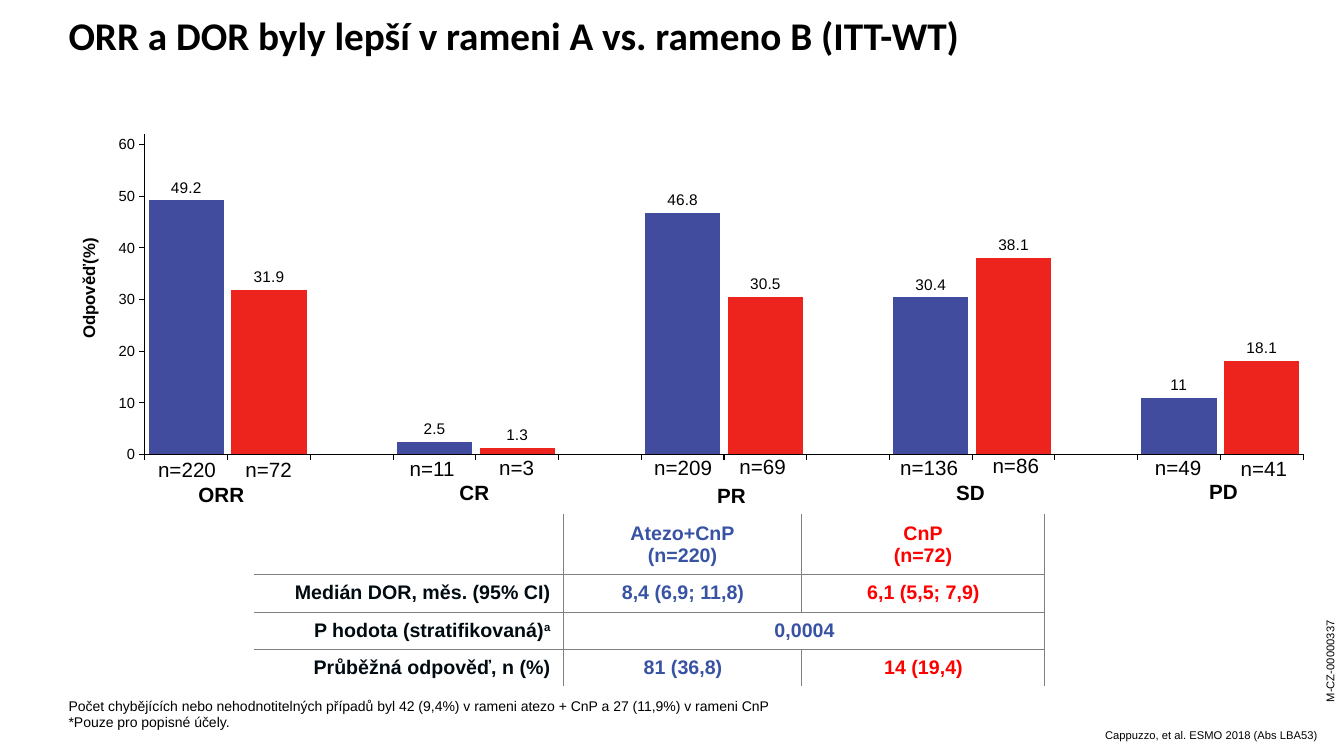
from dataclasses import dataclass
from lxml.etree import SubElement
from pptx import Presentation
from pptx.chart.data import CategoryChartData
from pptx.dml.color import RGBColor
from pptx.enum.chart import XL_CHART_TYPE as ChartType
from pptx.enum.chart import XL_LABEL_POSITION as LabelPos
from pptx.enum.chart import XL_TICK_LABEL_POSITION as TickLabelPos
from pptx.enum.chart import XL_TICK_MARK as Tick
from pptx.enum.text import MSO_ANCHOR as Anchor
from pptx.enum.text import PP_ALIGN as Align
from pptx.oxml.ns import qn
from pptx.util import Emu, Pt


@dataclass(frozen=True)
class Theme:
    black: str = "000000"
    ink: str = "000B11"
    white: str = "FFFFFF"
    grid: str = "808080"
    arm_a: str = "3953A4"
    arm_b: str = "FF0000"
    bar_a: str = "424C9F"
    bar_b: str = "EC241D"
    body: str = "Arial"
    heading: str = "Calibri"
    title: float = 28
    label: float = 14.7
    table: float = 14
    axis_title: float = 12
    value: float = 11
    tick: float = 10.5
    note: float = 10
    small: float = 8


T = Theme()


@dataclass(frozen=True)
class Box:
    lines: tuple[str, ...]
    x: int
    y: int
    w: int
    h: int
    size: float
    bold: bool = False
    font: str = T.body
    align: Align = Align.LEFT
    anchor: Anchor = Anchor.MIDDLE
    margins: tuple[int, int, int, int] = (0, 0, 0, 0)
    rotation: int = 0
    wrap: bool = True


@dataclass(frozen=True)
class Group:
    name: str
    x: int
    y: int
    counts: tuple[tuple[str, int, int], ...]  # text, left, top


@dataclass(frozen=True)
class Cell:
    lines: tuple[str, ...]
    color: str
    align: Align = Align.CENTER
    margins: tuple[int, int, int, int] = (14, 0, 13, 0)
    superscript: str = ""


def px(n: float) -> Emu:
    return Emu(int(n * 9144))  # 100 px to the inch


def style(font, size: float, color: str = T.black, bold: bool = False, name: str = T.body) -> None:
    for key, value in {"size": Pt(size), "bold": bold, "name": name}.items():
        setattr(font, key, value)
    font.color.rgb = RGBColor.from_string(color)


def set_margins(target, margins: tuple[int, int, int, int]) -> None:
    for side, value in zip(("left", "top", "right", "bottom"), margins):
        setattr(target, f"margin_{side}", px(value))


def add_box(s, b: Box) -> None:
    sp = s.shapes.add_textbox(px(b.x), px(b.y), px(b.w), px(b.h))
    sp.rotation = b.rotation
    tf = sp.text_frame
    tf.word_wrap = b.wrap
    tf.vertical_anchor = b.anchor
    set_margins(tf, b.margins)
    for i, line in enumerate(b.lines):
        p = tf.add_paragraph() if i else tf.paragraphs[0]
        p.alignment = b.align
        r = p.add_run()
        r.text = line
        style(r.font, b.size, bold=b.bold, name=b.font)


def set_layout(parent, **values) -> None:
    layout = parent.find(qn("c:layout"))
    if layout is None:
        layout = SubElement(parent, qn("c:layout"))
        parent.insert(0, layout)
    manual = SubElement(layout, qn("c:manualLayout"))
    for tag, value in values.items():
        SubElement(manual, qn(f"c:{tag}")).set("val", str(value))


def add_response_chart(s, values: list[float | None]) -> None:
    data = CategoryChartData()
    data.categories = [str(i + 1) for i in range(len(values))]
    data.add_series("Series 1", values)
    chart = s.shapes.add_chart(ChartType.COLUMN_CLUSTERED, px(37), px(111), px(1256), px(437), data).chart
    chart.has_legend = chart.has_title = False
    style(chart.font, T.tick)
    set_layout(chart.plots[0]._element.getparent(), layoutTarget="inner", xMode="edge", yMode="edge",
               x=0.085, y=0.051, w=0.915, h=0.727)

    # Axes
    cat, val = chart.category_axis, chart.value_axis
    for axis in (cat, val):
        for key, value in {"has_major_gridlines": False, "major_tick_mark": Tick.OUTSIDE,
                           "minor_tick_mark": Tick.NONE}.items():
            setattr(axis, key, value)
        axis.format.line.color.rgb = RGBColor.from_string(T.black)
        axis.format.line.width = Pt(0.75)
        style(axis.tick_labels.font, T.tick)
    cat.tick_label_position = TickLabelPos.NONE
    for key, value in {"minimum_scale": 0, "maximum_scale": 62, "major_unit": 10}.items():
        setattr(val, key, value)
    r = val.axis_title.text_frame.paragraphs[0].add_run()
    r.text = "Odpověď(%)"
    style(r.font, T.axis_title, bold=True)
    set_layout(val.axis_title._element, xMode="edge", yMode="edge", x=0.03, y=0.28)

    # Bars: arm A, arm B, gap
    plot = chart.plots[0]
    plot.gap_width, plot.vary_by_categories = 10, False
    series = plot.series[0]
    series.invert_if_negative = False
    series.format.fill.solid()
    series.format.fill.fore_color.rgb = RGBColor.from_string(T.bar_a)
    for i in range(1, len(values), 3):
        fill = series.points[i].format.fill
        fill.solid()
        fill.fore_color.rgb = RGBColor.from_string(T.bar_b)
    labels = series.data_labels
    labels.show_value, labels.position = True, LabelPos.OUTSIDE_END
    style(labels.font, T.value)


def set_borders(cell, sides: dict[str, bool]) -> None:
    tc_pr = cell._tc.get_or_add_tcPr()
    for side, visible in sides.items():
        ln = SubElement(tc_pr, qn(f"a:ln{side}"), w="6350")
        if visible:
            SubElement(SubElement(ln, qn("a:solidFill")), qn("a:srgbClr"), val=T.grid)
        else:
            SubElement(ln, qn("a:noFill"))


def fill_cell(cell, c: Cell) -> None:
    cell.vertical_anchor = Anchor.MIDDLE
    set_margins(cell, c.margins)
    for i, line in enumerate(c.lines):
        p = cell.text_frame.add_paragraph() if i else cell.text_frame.paragraphs[0]
        p.alignment = c.align
        for text in filter(None, (line, c.superscript)):
            r = p.add_run()
            r.text = text
            style(r.font, T.table, c.color, True)
    if c.superscript:
        r.font._element.set("baseline", "30000")


def add_dor_table(s, rows: list[list[Cell | None]], widths: list[int], heights: list[int]) -> None:
    table = s.shapes.add_table(len(rows), len(widths), px(252), px(510), px(sum(widths)), px(sum(heights))).table
    table.first_row = table.horz_banding = False
    for col, width in zip(table.columns, widths):
        col.width = px(width)
    for row, height in zip(table.rows, heights):
        row.height = px(height)
    for i, row in enumerate(rows):
        for j, content in enumerate(row):
            cell = table.cell(i, j)
            set_borders(cell, {"L": j > 0, "R": True, "T": i > 0, "B": i < len(rows) - 1})
            cell.fill.solid()
            cell.fill.fore_color.rgb = RGBColor.from_string(T.white)
            if content:
                fill_cell(cell, content)
    table.cell(2, 1).merge(table.cell(2, 2))


def head(arm: str, n: str, color: str) -> Cell:
    return Cell((arm, n), color, margins=(13, 7, 13, 7))


def row_name(text: str, superscript: str = "") -> Cell:
    return Cell((text,), T.ink, Align.RIGHT, (0, 7, 13, 7), superscript)


RESPONSES = [49.2, 31.9, None, 2.5, 1.3, None, 46.8, 30.5, None, 30.4, 38.1, None, 11, 18.1]
GROUPS = [
    Group("ORR", 99, 473, (("n=220", 121, 448), ("n=72", 202, 448))),
    Group("CR", 350, 471, (("n=11", 364, 447), ("n=3", 448, 446))),
    Group("PR", 605, 474, (("n=209", 613, 446), ("n=69", 692, 445))),
    Group("SD", 842, 471, (("n=136", 857, 446), ("n=86", 943, 444))),
    Group("PD", 1093, 470, (("n=49", 1104, 446), ("n=41", 1189, 447))),
]
DOR_ROWS = [
    [None, head("Atezo+CnP", "(n=220)", T.arm_a), head("CnP", "(n=72)", T.arm_b)],
    [row_name("Medián DOR, měs. (95% CI)"), Cell(("8,4 (6,9; 11,8)",), T.arm_a), Cell(("6,1 (5,5; 7,9)",), T.arm_b)],
    [row_name("P hodota (stratifikovaná)", "a"), Cell(("0,0004",), T.arm_a), None],
    [row_name("Průběžná odpověď, n (%)"), Cell(("81 (36,8)",), T.arm_a), Cell(("14 (19,4)",), T.arm_b)],
]
TEXTS = [
    Box(("M-CZ-00000337",), 1268, 644, 102, 24, T.small, align=Align.CENTER, rotation=270, wrap=False),
    Box(("ORR a DOR byly lepší v rameni A vs. rameno B (ITT-WT)",), 68, -11, 1197, 91, T.title, True, T.heading),
    Box(("Počet chybějících nebo nehodnotitelných případů byl 42 (9,4%) v rameni atezo + CnP a 27 (11,9%) v rameni CnP",
         "*Pouze pro popisné účely."), 68, 678, 812, 47, T.note, anchor=Anchor.BOTTOM),
    Box(("Cappuzzo, et al. ESMO 2018 (Abs LBA53)",), 709, 689, 598, 47, T.small,
        align=Align.RIGHT, anchor=Anchor.BOTTOM),
]


def main() -> None:
    prs = Presentation()
    prs.slide_width, prs.slide_height = px(1333), px(750)
    s = prs.slides.add_slide(prs.slide_layouts[6])

    # Table, title and footnotes
    add_dor_table(s, DOR_ROWS, [307, 236, 241], [60, 37, 37, 37])
    for box in TEXTS:
        add_box(s, box)

    # Chart with group names and patient counts
    add_response_chart(s, RESPONSES)
    centred = {"align": Align.CENTER, "anchor": Anchor.TOP, "margins": (10, 5, 10, 5)}
    for g in GROUPS:
        for text, x, y in g.counts:
            add_box(s, Box((text,), x, y, 129, 35, T.label, **centred))
        add_box(s, Box((g.name,), g.x, g.y, 241, 35, T.label, True, **centred))

    prs.save("out.pptx")


if __name__ == "__main__":
    main()
